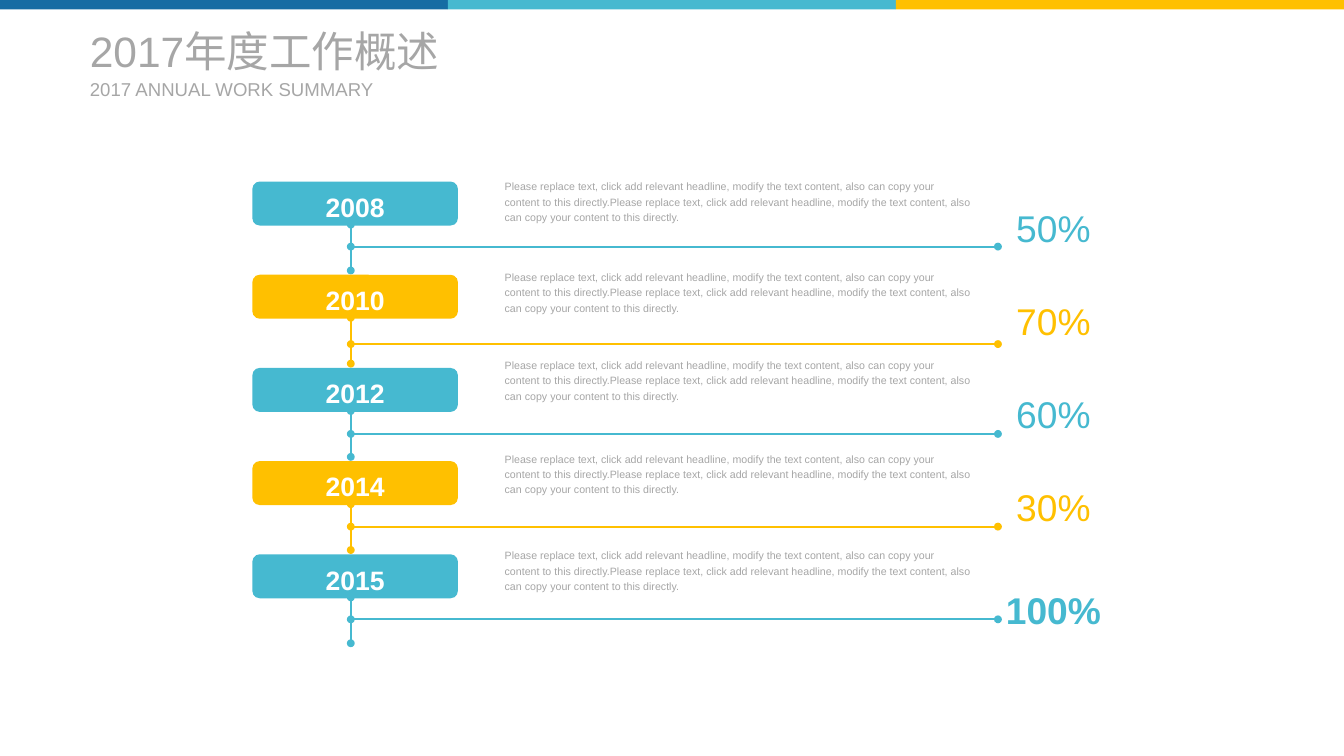
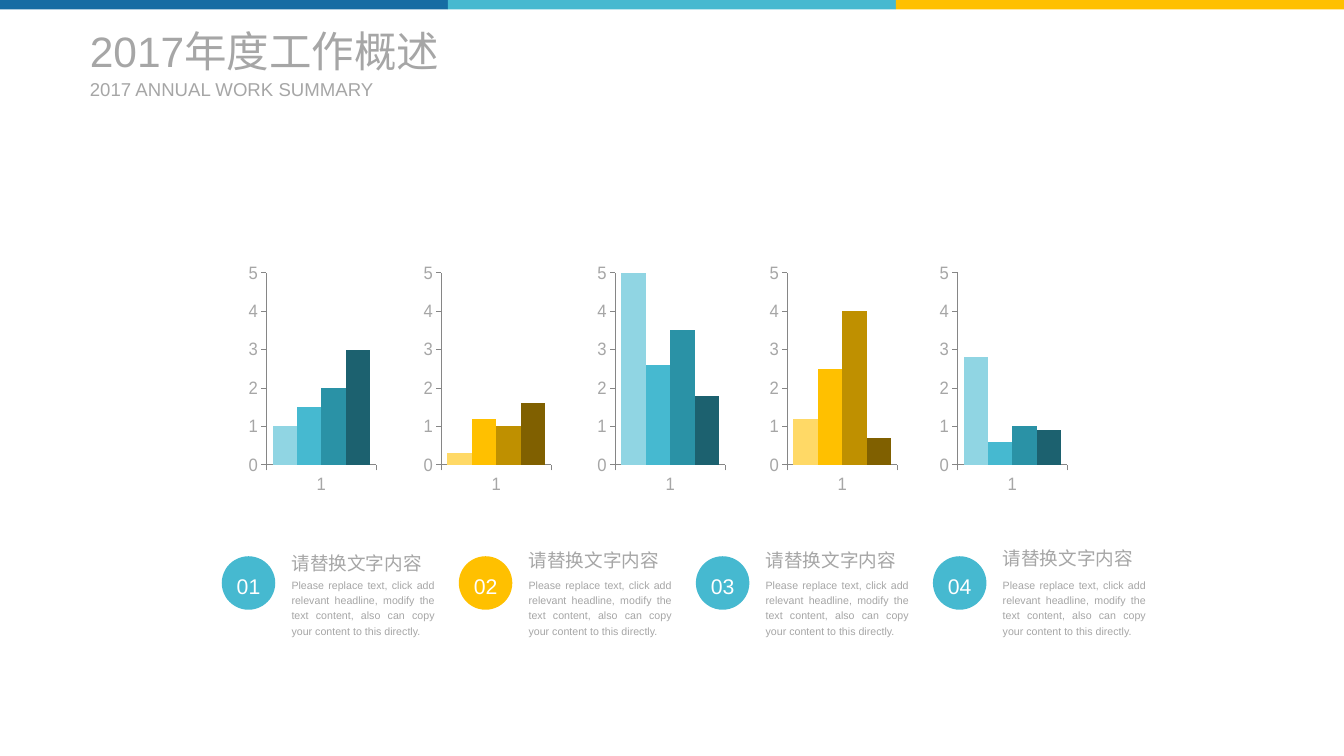
import pptx
import pptx.util
import pptx.dml.color
import pptx.chart.data
import pptx.enum.chart
import pptx.enum.shapes
import pptx.enum.text
import pptx.oxml
import pptx.oxml.ns
import lxml.etree

Inches = pptx.util.Inches
Kind = pptx.enum.shapes.MSO_SHAPE
Align = pptx.enum.text.PP_ALIGN
Anchor = pptx.enum.text.MSO_ANCHOR

WIDE, HIGH = 14.06, 7.91
FONT = "Arial"
COLORS = {
    "blue": "166CA3", "teal": "46B9D0", "gold": "FFC000",
    "gray": "A6A6A6", "axis": "868686", "white": "FFFFFF",
}
SHADES = {
    "teal": ["90D5E3", "46B9D0", "2A92A6", "1C616F"],
    "gold": ["FFD966", "FFC000", "BF9000", "806000"],
}
PHRASE = ("Please replace text, click add relevant headline, modify the text "
          "content, also can copy your content to this directly.")
ROWS = [
    ("2008", "50%", "teal", 1.86, 2.58),
    ("2010", "70%", "gold", 2.81, 3.6),
    ("2012", "60%", "teal", 3.73, 4.54),
    ("2014", "30%", "gold", 4.71, 5.51),
    ("2015", "100%", "teal", 5.72, 6.48),
]
CHARTS = [
    (2.6, "teal", [1, 1.5, 2, 3]),
    (4.43, "gold", [0.3, 1.2, 1, 1.6]),
    (6.25, "teal", [5, 2.6, 3.5, 1.8]),
    (8.05, "gold", [1.2, 2.5, 4, 0.7]),
    (9.83, "teal", [2.8, 0.6, 1, 0.9]),
]
CARDS = [("01", "teal", 5.73), ("02", "gold", 5.7),
         ("03", "teal", 5.7), ("04", "teal", 5.68)]


def tint(code):
    """Turn a hex string into a colour."""
    return pptx.dml.color.RGBColor.from_string(code)


def write(shape, text, size=8, color="gray", bold=False, align=Align.LEFT,
          anchor=Anchor.TOP, space=1.0):
    """Put formatted text into a shape."""
    frame = shape.text_frame
    frame.word_wrap = True
    frame.vertical_anchor = anchor
    frame.margin_left = frame.margin_right = 0
    frame.margin_top = frame.margin_bottom = 0
    para = frame.paragraphs[0]
    para.alignment = align
    para.line_spacing = space
    run = para.add_run()
    run.text = text
    run.font.name = FONT
    run.font.size = pptx.util.Pt(size)
    run.font.bold = bold
    run.font.color.rgb = tint(COLORS[color])


def label(slide, box, text, **form):
    """Add a text box at the given box."""
    write(slide.shapes.add_textbox(*map(Inches, box)), text, **form)


def block(slide, kind, box, color):
    """Add a filled shape without outline."""
    shape = slide.shapes.add_shape(kind, *map(Inches, box))
    shape.shadow.inherit = False
    shape.fill.solid()
    shape.fill.fore_color.rgb = tint(COLORS[color])
    shape.line.fill.background()
    return shape


def link(slide, start, end, color):
    """Draw a line with a dot at each end."""
    line = slide.shapes.add_connector(
        pptx.enum.shapes.MSO_CONNECTOR.STRAIGHT, *map(Inches, start + end))
    line.line.width = pptx.util.Pt(1.5)
    line.line.color.rgb = tint(COLORS[color])
    qn = pptx.oxml.ns.qn
    props = line._element.spPr
    for tag in ("a:headEnd", "a:tailEnd"):
        lxml.etree.SubElement(props.find(qn("a:ln")), qn(tag), type="oval")
    lxml.etree.SubElement(props, qn("a:effectLst"))


def header(slide):
    """Add the title pair and the band of three colours."""
    label(slide, (0.94, 0.26, 4.32, 0.54), "2017年度工作概述",
          size=32, anchor=Anchor.MIDDLE)
    label(slide, (0.94, 0.81, 3.07, 0.24), "2017 ANNUAL WORK SUMMARY",
          size=14, anchor=Anchor.MIDDLE)
    part = WIDE / 3
    for i, color in enumerate(("blue", "teal", "gold")):
        block(slide, Kind.RECTANGLE, (i * part, 0, part, 0.1), color)


def stage(slide, left, top, row):
    """Add one year of the timeline."""
    year, share, color, note, rule = row
    last = share == "100%"
    stem = left + 1.03
    tag = block(slide, Kind.ROUNDED_RECTANGLE, (left, top, 2.15, 0.46), color)
    write(tag, year, size=20, color="white", bold=True, align=Align.CENTER,
          anchor=Anchor.MIDDLE, space=1.2)
    link(slide, (stem, top + 0.45), (stem, top + 0.93), color)
    link(slide, (left + 7.8, rule), (stem, rule), color)
    label(slide, (left + 2.64, note, 4.9, 0.48), PHRASE + PHRASE, space=1.2)
    label(slide, (left + 7.83, top + 0.19, 1.1, 0.58), share, size=28,
          color=color, bold=last, align=Align.CENTER, anchor=Anchor.MIDDLE,
          space=1.4 if last else 1.0)


def layout(chart):
    """Fix the inner plot area of a chart."""
    sizes = {"x": 0.037, "y": 0.031, "w": 0.944, "h": 0.863}
    rules = "".join(f'<c:{key}Mode val="edge"/>' for key in "xy")
    rules += "".join(f'<c:{key} val="{size}"/>' for key, size in sizes.items())
    node = pptx.oxml.parse_xml(
        f'<c:layout {pptx.oxml.ns.nsdecls("c")}><c:manualLayout>'
        f'<c:layoutTarget val="inner"/>{rules}</c:manualLayout></c:layout>')
    area = chart._chartSpace.chart.plotArea
    for old in area.findall(pptx.oxml.ns.qn("c:layout")):
        area.remove(old)
    area.insert(0, node)


def graph(slide, box, values, shades):
    """Add one small column chart."""
    data = pptx.chart.data.CategoryChartData()
    data.categories = ["1"]
    for i, value in enumerate(values, 1):
        data.add_series(f"Series {i}", [value])
    kind = pptx.enum.chart.XL_CHART_TYPE.COLUMN_CLUSTERED
    chart = slide.shapes.add_chart(kind, *map(Inches, box), data).chart
    chart.has_legend = chart.has_title = False
    chart.font.name = FONT
    chart.font.size = pptx.util.Pt(14)
    chart.font.color.rgb = tint(COLORS["gray"])
    plot = chart.plots[0]
    plot.gap_width = 50
    plot.vary_by_categories = False
    for series, shade in zip(plot.series, shades):
        series.format.fill.solid()
        series.format.fill.fore_color.rgb = tint(shade)
    for axis in (chart.category_axis, chart.value_axis):
        axis.has_major_gridlines = False
        axis.major_tick_mark = pptx.enum.chart.XL_TICK_MARK.OUTSIDE
        axis.format.line.color.rgb = tint(COLORS["axis"])
    scale = chart.value_axis
    scale.minimum_scale, scale.maximum_scale, scale.major_unit = 0, 5, 1
    layout(chart)


def card(slide, left, top, number, color, head):
    """Add a numbered circle with heading and note."""
    disc = block(slide, Kind.OVAL, (left, top, 0.56, 0.56), color)
    write(disc, number, size=16, color="white", align=Align.CENTER,
          anchor=Anchor.MIDDLE, space=1.2)
    label(slide, (left + 0.73, head, 1.5, 0.28), "请替换文字内容",
          size=14, space=1.2)
    label(slide, (left + 0.73, top + 0.21, 1.5, 0.63), PHRASE,
          align=Align.JUSTIFY, space=1.2)


def years(slide):
    """Fill the timeline slide."""
    for i, row in enumerate(ROWS):
        stage(slide, 2.64, 1.9 + 0.975 * i, row)
    header(slide)


def stats(slide):
    """Fill the chart slide."""
    for left, tone, values in CHARTS:
        graph(slide, (left, 2.75, 1.36, 2.42), values, SHADES[tone])
    for i, (number, color, head) in enumerate(CARDS):
        card(slide, 2.32 + 2.48 * i, 5.82, number, color, head)
    header(slide)


def main():
    """Build and save the slides."""
    deck = pptx.Presentation()
    deck.slide_width, deck.slide_height = Inches(WIDE), Inches(HIGH)
    for fill in (years, stats):
        fill(deck.slides.add_slide(deck.slide_layouts[6]))
    deck.save("out.pptx")


if __name__ == "__main__":
    main()
